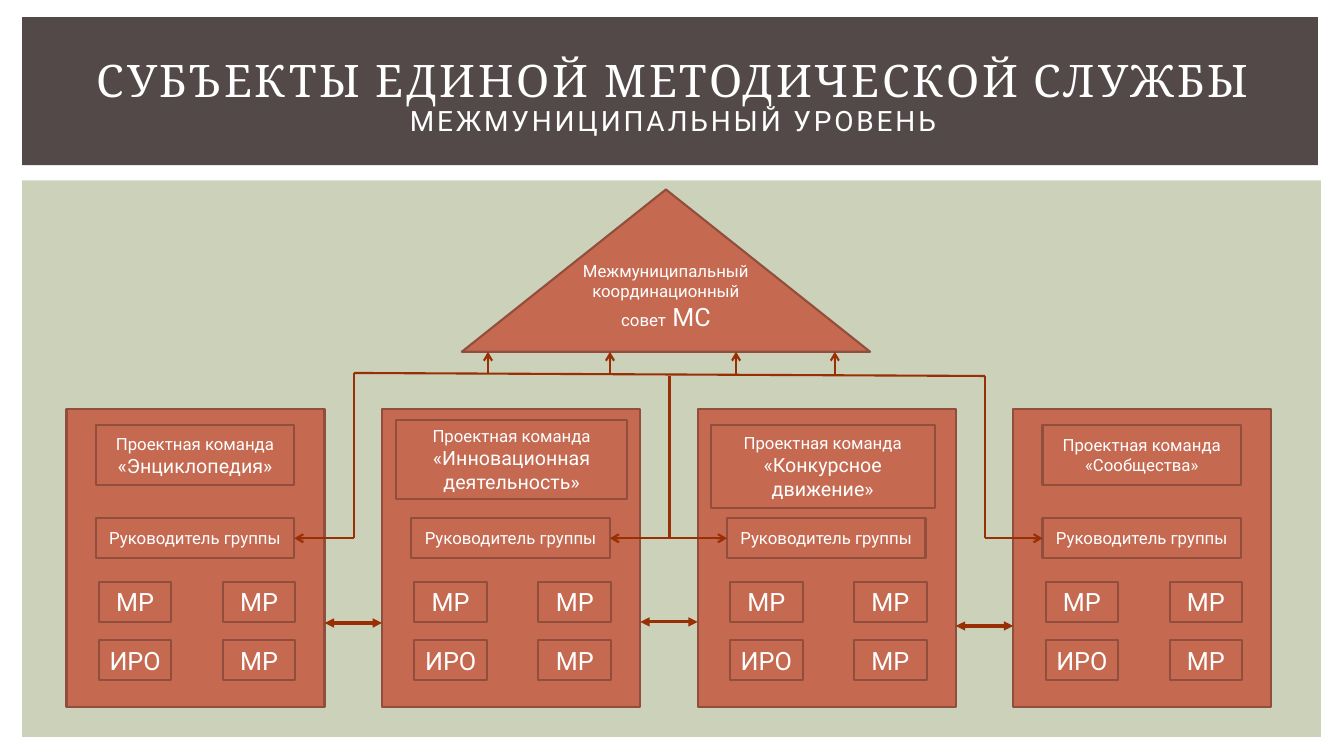
from lxml import etree
from pptx import Presentation
from pptx import util as u
from pptx.dml.color import RGBColor
from pptx.enum import shapes, text
from pptx.oxml import ns

WHITE, SAGE, UMBER = "FFFFFF", "CCD1B9", "534949"
CLAY, CLAY_EDGE, RUST = "C66951", "924E3C", "992F05"

PANEL_LEFT, PANEL_TOP, PANEL_STEP = 0.66, 4.06, 3.13
PANEL_WIDTH, PANEL_HEIGHT = 2.56, 2.95
LEADER_MIDDLE = 5.34

# Team name, name size, and heading box: offset in the panel, top, width, height
TEAMS = [
    ("«Энциклопедия»", 14, (0.29, 4.22, 1.97, 0.59)),
    ("«Инновационная деятельность»", 14, (0.14, 4.17, 2.29, 0.78)),
    ("«Конкурсное движение»", 14, (0.13, 4.22, 2.22, 0.82)),
    ("«Сообщества»", 12, (0.29, 4.22, 1.97, 0.59)),
]
MEMBERS = [["МР", "МР"], ["ИРО", "МР"]]


def color(hex_string):
    return RGBColor.from_string(hex_string)


def write(shape, lines):
    """Fill a shape with centred lines, each a list of (text, size, font)."""
    frame = shape.text_frame
    frame.word_wrap = True
    frame.vertical_anchor = text.MSO_ANCHOR.MIDDLE
    for index, line in enumerate(lines):
        paragraph = frame.paragraphs[0] if index == 0 else frame.add_paragraph()
        paragraph.alignment = text.PP_ALIGN.CENTER
        for content, size, font in line:
            run = paragraph.add_run()
            run.text = content
            run.font.size = u.Pt(size)
            run.font.name = font
            run.font.color.rgb = color(WHITE)


def add_block(parent, left, top, width, height, fill=CLAY, edge=CLAY_EDGE,
              preset=shapes.MSO_SHAPE.RECTANGLE):
    shape = parent.add_shape(preset, *map(u.Inches, (left, top, width, height)))
    shape.shadow.inherit = False
    shape.fill.solid()
    shape.fill.fore_color.rgb = color(fill)
    if edge:
        shape.line.color.rgb = color(edge)
        shape.line.width = u.Pt(1.5)
    else:
        shape.line.fill.background()
    return shape


def add_line(slide, start, end, width=1.5, head=None, tail=None):
    """Draw a straight line; head is the arrowhead at start, tail at end."""
    line = slide.shapes.add_connector(
        shapes.MSO_CONNECTOR.STRAIGHT, *map(u.Inches, (*start, *end)))
    line.line.color.rgb = color(RUST)
    line.line.width = u.Pt(width)
    properties = line.line._get_or_add_ln()
    for tag, kind in (("a:headEnd", head), ("a:tailEnd", tail)):
        if kind:
            etree.SubElement(properties, ns.qn(tag)).set("type", kind)
    etree.SubElement(line._element.spPr, ns.qn("a:effectLst"))
    return line


def add_title(slide):
    box = slide.shapes.add_textbox(*map(u.Inches, (0.33, 0.4, 12.69, 1.15)))
    write(box, [[("СУБЪЕКТЫ ЕДИНОЙ МЕТОДИЧЕСКОЙ СЛУЖБЫ", 32, "Cambria")],
                [("МЕЖМУНИЦИПАЛЬНЫЙ УРОВЕНЬ", 20, "Roboto")]])
    for paragraph in box.text_frame.paragraphs:
        paragraph.line_spacing = 0.9
        for run in paragraph.runs:
            run._r.get_or_add_rPr().set("spc", "200")


def add_council(slide):
    triangle = add_block(slide.shapes, 4.58, 1.88, 4.05, 1.61,
                         preset=shapes.MSO_SHAPE.ISOSCELES_TRIANGLE)
    write(triangle, [[("Межмуниципальный координационный совет", 12, "Roboto"),
                      (" МС", 18, "Roboto")]])
    triangle.text_frame.margin_bottom = u.Inches(0.35)


def add_team(slide, left, name, name_size, heading_box):
    """Draw one team panel and return its leader box."""
    group = slide.shapes.add_group_shape().shapes
    add_block(group, left, PANEL_TOP, PANEL_WIDTH, PANEL_HEIGHT)
    leader = add_block(group, left + 0.29, LEADER_MIDDLE - 0.2, 1.97, 0.4)
    write(leader, [[("Руководитель группы", 12, "Roboto")]])
    for row, members in enumerate(MEMBERS):
        for column, member in enumerate(members):
            box = add_block(group, left + 0.32 + 1.23 * column,
                            5.77 + 0.58 * row, 0.72, 0.4)
            write(box, [[(member, 18, "Roboto")]])
    offset, top, width, height = heading_box
    heading = add_block(group, left + offset, top, width, height)
    write(heading, [[("Проектная команда", 12, "Roboto")],
                    [(name, name_size, "Roboto")]])
    return leader


def add_links(slide, leaders):
    """Join the leaders to the council and neighbouring teams to each other."""
    add_line(slide, (3.51, 3.7), (9.77, 3.73))
    for x, top in ((3.51, 3.7), (6.64, 3.73), (9.77, 3.73)):
        add_line(slide, (x, top), (x, LEADER_MIDDLE))
    for leader, x, side in zip(leaders, (3.51, 6.64, 6.64, 9.77), (3, 3, 1, 1)):
        branch = add_line(slide, (x, LEADER_MIDDLE), (x, LEADER_MIDDLE),
                          tail="arrow")
        branch.end_connect(leader, side)
    for x in (4.84, 6.05, 7.3, 8.28):
        add_line(slide, (x, 3.71), (x, 3.49), tail="arrow")
    for index, y in enumerate((6.18, 6.17, 6.21)):
        left = PANEL_LEFT + PANEL_STEP * index
        add_line(slide, (left + PANEL_WIDTH, y), (left + PANEL_STEP, y),
                 width=2.25, head="triangle", tail="triangle")


def main():
    presentation = Presentation()
    presentation.slide_width = u.Inches(13.33)
    presentation.slide_height = u.Inches(7.5)
    slide = presentation.slides.add_slide(presentation.slide_layouts[6])
    add_block(slide.shapes, 0.22, 1.79, 12.88, 5.52, SAGE, None)
    add_block(slide.shapes, 0.22, 0.17, 12.85, 1.47, UMBER, None)
    add_title(slide)
    add_council(slide)
    leaders = [add_team(slide, PANEL_LEFT + PANEL_STEP * index, *team)
               for index, team in enumerate(TEAMS)]
    add_links(slide, leaders)
    presentation.save("out.pptx")


if __name__ == "__main__":
    main()
